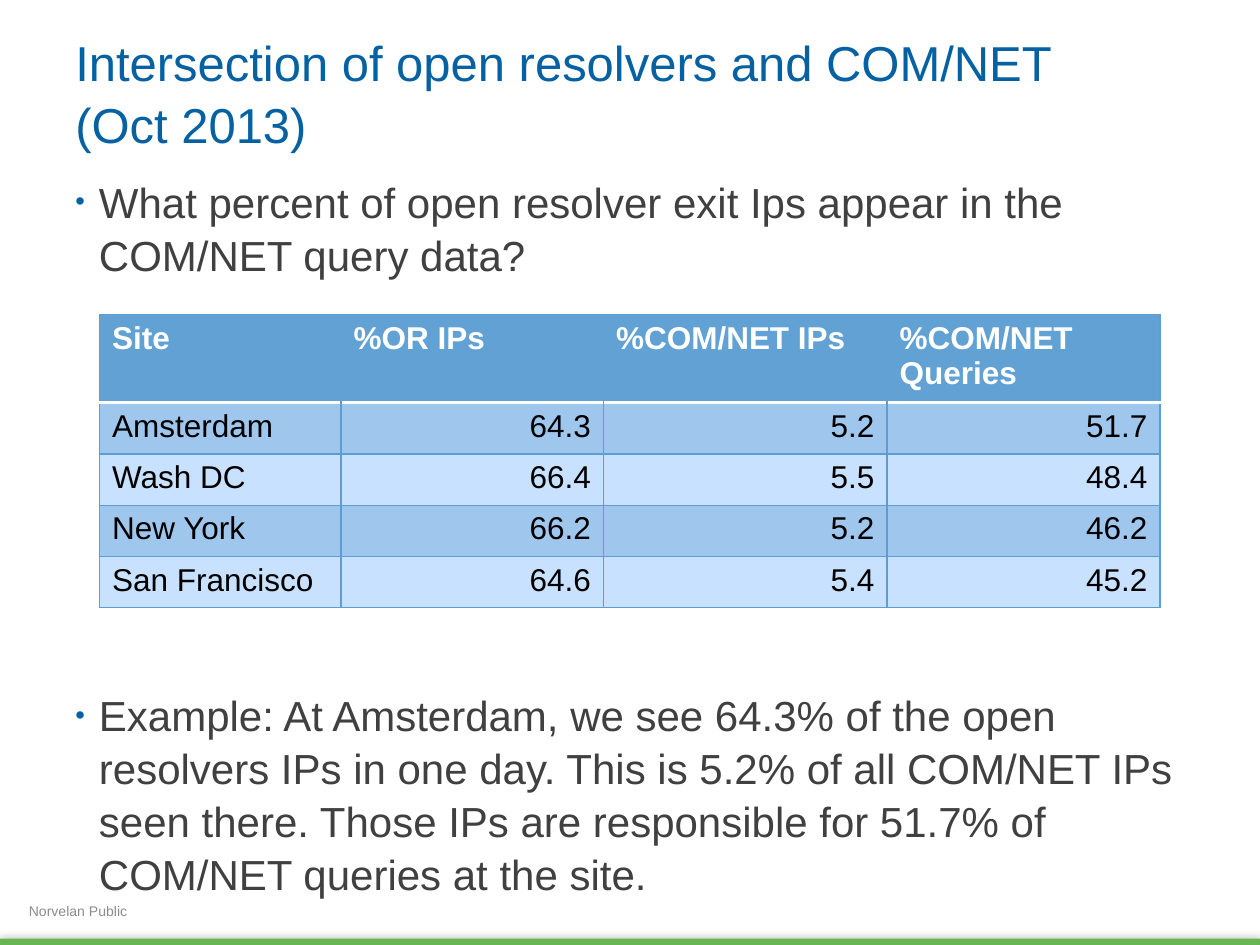
"""Build the slide on open resolvers and COM/NET query data."""
from lxml.etree import SubElement
from pptx import Presentation
from pptx.dml.color import RGBColor
from pptx.enum.shapes import MSO_SHAPE
from pptx.enum.text import MSO_ANCHOR, PP_ALIGN
from pptx.oxml import parse_xml
from pptx.oxml.ns import nsdecls, qn
from pptx.util import Pt

COLORS = {
    "title": "0661A3", "bullet": "0061A3", "body": "404040", "footer": "8C8C8C",
    "bar": "69B453", "header": "61A1D4", "odd": "9FC7EE", "even": "C8E1FF",
    "border": "5C9ED2", "white": "FFFFFF", "black": "000000",
}


def write(frame, text, size, color, bold=False, align=PP_ALIGN.LEFT,
          anchor=MSO_ANCHOR.TOP, spacing=1.0, bullet=False):
    frame.word_wrap = True
    frame.vertical_anchor = anchor
    para = frame.paragraphs[0]
    para.text = text
    para.alignment = align
    para.line_spacing = spacing
    for span in para.runs:
        span.font.name = "Arial"
        span.font.size = Pt(size)
        span.font.bold = bold
        span.font.color.rgb = RGBColor.from_string(COLORS[color])
    if bullet:
        properties = para._p.get_or_add_pPr()
        properties.set("marL", str(Pt(13.5)))
        properties.set("indent", str(-Pt(13.5)))
        bullet_color = SubElement(properties, qn("a:buClr"))
        SubElement(bullet_color, qn("a:srgbClr"), val=COLORS["bullet"])
        SubElement(properties, qn("a:buSzPct"), val="65000")
        SubElement(properties, qn("a:buFont"), typeface="Arial")
        SubElement(properties, qn("a:buChar"), char="•")


def add_borders(cell, **sides):
    properties = cell._tc.get_or_add_tcPr()
    for index, side in enumerate("LRTB"):
        color, width = sides.get(side, ("border", 0.75))
        properties.insert(index, parse_xml(
            f'<a:ln{side} {nsdecls("a")} w="{Pt(width)}"><a:solidFill>'
            f'<a:srgbClr val="{COLORS[color]}"/></a:solidFill></a:ln{side}>'))


deck = Presentation()
deck.slide_width, deck.slide_height = Pt(720), Pt(540)
page = deck.slides.add_slide(deck.slide_layouts[6])

bar = page.shapes.add_shape(MSO_SHAPE.RECTANGLE, 0, Pt(536.4), Pt(720), Pt(3.6))
bar.fill.solid()
bar.fill.fore_color.rgb = RGBColor.from_string(COLORS["bar"])
bar.line.fill.background()
bar.shadow.inherit = False
shadow = SubElement(bar._element.spPr.find(qn("a:effectLst")), qn("a:outerShdw"),
                    blurRad=str(Pt(5)), dist="0", dir="0")
shadow_color = SubElement(shadow, qn("a:srgbClr"), val=COLORS["black"])
SubElement(shadow_color, qn("a:alpha"), val="40000")

TEXTS = [
    ((9.4, 513.4, 239, 14.4), "Norvelan Public",
     dict(size=8, color="footer", anchor=MSO_ANCHOR.MIDDLE)),
    ((36, 19.5, 648, 65.5), "Intersection of open resolvers and COM/NET\n(Oct 2013)",
     dict(size=28, color="title", anchor=MSO_ANCHOR.MIDDLE, spacing=1.05)),
    ((36, 95.8, 648, 66),
     "What percent of open resolver exit Ips appear in the COM/NET query data?",
     dict(size=24, color="body", spacing=1.05, bullet=True)),
    ((36, 389, 648, 124),
     "Example: At Amsterdam, we see 64.3% of the open resolvers IPs in one day. "
     "This is 5.2% of all COM/NET IPs seen there. Those IPs are responsible for "
     "51.7% of COM/NET queries at the site.",
     dict(size=24, color="body", spacing=1.05, bullet=True)),
]
for bounds, text, style in TEXTS:
    box = page.shapes.add_textbox(*map(Pt, bounds))
    write(box.text_frame, text, **style)

ROWS = [
    ("Site", "%OR IPs", "%COM/NET IPs", "%COM/NET Queries"),
    ("Amsterdam", "64.3", "5.2", "51.7"),
    ("Wash DC", "66.4", "5.5", "48.4"),
    ("New York", "66.2", "5.2", "46.2"),
    ("San Francisco", "64.6", "5.4", "45.2"),
]
WIDTHS = (138, 150, 162, 156)
HEIGHTS = (48,) + (29.2,) * 4
table = page.shapes.add_table(len(ROWS), len(WIDTHS), Pt(56.9), Pt(179.8),
                              Pt(sum(WIDTHS)), Pt(sum(HEIGHTS))).table
for column, width in zip(table.columns, WIDTHS):
    column.width = Pt(width)
for row, (values, height) in enumerate(zip(ROWS, HEIGHTS)):
    table.rows[row].height = Pt(height)
    is_header = row == 0
    fill = "header" if is_header else ("even", "odd")[row % 2]
    for column, value in enumerate(values):
        cell = table.cell(row, column)
        cell.fill.solid()
        cell.fill.fore_color.rgb = RGBColor.from_string(COLORS[fill])
        is_number = column > 0 and not is_header
        write(cell.text_frame, value, size=18, bold=is_header,
              color="white" if is_header else "black",
              align=PP_ALIGN.RIGHT if is_number else PP_ALIGN.LEFT)
        rule = ("white", 2)
        if is_header:
            add_borders(cell, L=("border" if column == 0 else "header", 0.75),
                        R=("border" if column == 3 else "header", 0.75), B=rule)
        elif row == 1:
            add_borders(cell, T=rule)
        else:
            add_borders(cell)

deck.save("out.pptx")
